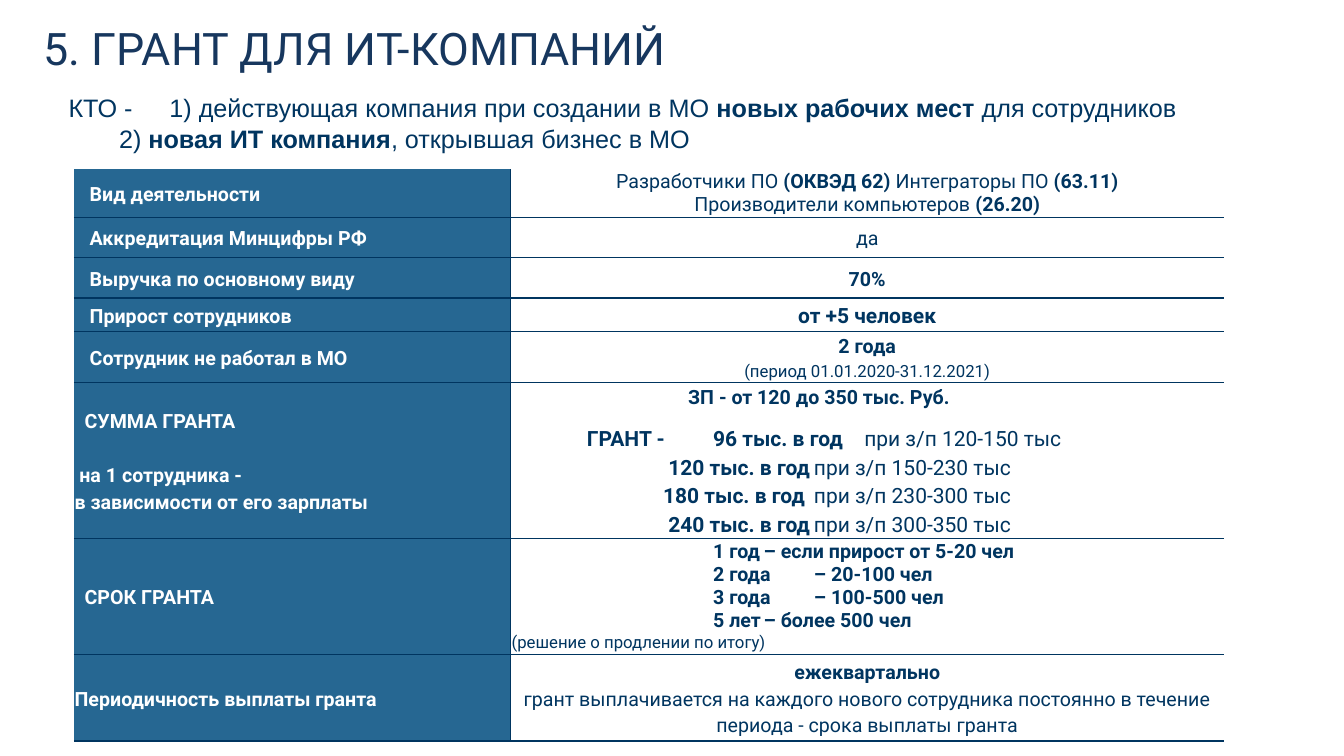
from collections import namedtuple
from lxml.etree import SubElement
from pptx import Presentation
from pptx.dml.color import RGBColor
from pptx.enum.text import MSO_ANCHOR as ANCHOR, MSO_AUTO_SIZE as AUTO, PP_ALIGN as ALIGN
from pptx.oxml.ns import qn
from pptx.util import Cm, Pt

NAVY = RGBColor(0x00, 0x35, 0x60)
TITLE_BLUE = RGBColor(0x17, 0x37, 0x5E)
STEEL = RGBColor(0x26, 0x67, 0x92)
WHITE = RGBColor(0xFF, 0xFF, 0xFF)
NO_STYLE = "{2D5ABB26-0587-4C30-8999-92F81FD0307C}"

Line = namedtuple("Line", "text size indent tabs spacing before",
                  defaults=(14, None, (), 1.15, 0))
Row = namedtuple("Row", "height label details")


def label(text, indent=0.38, before=0):
    return Line(f"*{text}*", indent=indent, before=before)


def grant(text, indent, *tabs, before=0):
    return Line(text, 15, indent, tabs, before=before)


def term(text):
    return Line(f"*{text}*", indent=5.08, tabs=(6.85,), spacing=1.0)


ROWS = [
    Row(1.22, [label("Вид деятельности")],
        [Line("Разработчики ПО *(ОКВЭД 62)* Интеграторы ПО *(63.11)*", spacing=1.0),
         Line("Производители компьютеров *(26.20)*", spacing=1.0)]),
    Row(1.01, [label("Аккредитация Минцифры РФ")], [Line("да")]),
    Row(1.02, [label("Выручка по основному виду")], [Line("*70%*")]),
    Row(0.84, [label("Прирост сотрудников")], [Line("*от +5 человек*", 15)]),
    Row(1.26, [label("Сотрудник не работал в МО")],
        [Line("*2 года*"), Line("(период 01.01.2020-31.12.2021)", 12)]),
    Row(3.93, [label("СУММА ГРАНТА", 0.25),
               label("на 1 сотрудника -", 0.12, 20),
               label("в зависимости от его зарплаты", 0)],
        [Line("*ЗП - от 120 до 350 тыс. Руб.*", indent=4.45),
         grant("*ГРАНТ -\t96 тыс. в год*\tпри з/п 120-150 тыс", 1.9, 4.48, 7.98, before=10),
         grant("*120 тыс. в год*\tпри з/п 150-230 тыс", 3.95, 7.8),
         grant("*180 тыс. в год*\tпри з/п 230-300 тыс", 3.82, 7.66),
         grant("*240 тыс. в год*\tпри з/п 300-350 тыс", 3.95, 7.66)]),
    Row(2.93, [label("СРОК ГРАНТА", 0.25)],
        [term("1 год\t– если прирост от 5-20 чел"),
         term("2 года\t– 20-100 чел"),
         term("3 года\t– 100-500 чел"),
         term("5 лет\t– более 500 чел"),
         Line("(решение о продлении по итогу)", 12, 0, spacing=1.0)]),
    Row(2.18, [label("Периодичность выплаты гранта", 0)],
        [Line("*ежеквартально*"),
         Line("грант выплачивается на каждого нового сотрудника постоянно "
              "в течение периода - срока выплаты гранта")]),
]


def add_runs(p, text, size, font, color):
    for i, part in enumerate(text.split("*")):
        if part:
            r = p.add_run()
            r.text = part
            r.font.size = Pt(size)
            r.font.name = font
            r.font.bold = i % 2 == 1
            r.font.color.rgb = color


def add_line(p, line, color):
    p.line_spacing = line.spacing
    p.space_before = Pt(line.before)
    p.alignment = ALIGN.CENTER if line.indent is None else ALIGN.LEFT
    pPr = p._p.get_or_add_pPr()
    pPr.set("marL", "0")
    pPr.set("indent", str(Cm(line.indent or 0)))
    if line.tabs:
        tabs = SubElement(pPr, qn("a:tabLst"))
        for pos in line.tabs:
            SubElement(tabs, qn("a:tab"), pos=str(Cm(pos)), algn="l")
    add_runs(p, line.text, line.size, "Roboto", color)


def add_border(cell, side):
    ln = SubElement(cell._tc.get_or_add_tcPr(), qn(f"a:{side}"), w=str(Pt(1)))
    fill = SubElement(ln, qn("a:solidFill"))
    SubElement(fill, qn("a:srgbClr"), val=str(NAVY))


def fill_cell(cell, lines, color, divider):
    cell.vertical_anchor = ANCHOR.MIDDLE
    cell.margin_left = cell.margin_right = Cm(0.02)
    cell.margin_top = cell.margin_bottom = Cm(0.02)
    tf = cell.text_frame
    for i, line in enumerate(lines):
        add_line(tf.add_paragraph() if i else tf.paragraphs[0], line, color)
    add_border(cell, divider)
    add_border(cell, "lnB")


def add_title(s, x, y, w, h):
    sp = s.shapes.title
    sp.left, sp.top, sp.width, sp.height = Cm(x), Cm(y), Cm(w), Cm(h)
    tf = sp.text_frame
    tf.auto_size = AUTO.NONE
    tf.vertical_anchor = ANCHOR.MIDDLE
    tf.margin_left = tf.margin_right = Cm(0.13)
    tf.margin_top = tf.margin_bottom = Cm(0.13)
    p = tf.paragraphs[0]
    p.alignment = ALIGN.LEFT
    p.line_spacing = 0.9
    add_runs(p, "5. ГРАНТ ДЛЯ ИТ-КОМПАНИЙ", 32, "Roboto", TITLE_BLUE)


def add_audience(s, x, y, w, h):
    tf = s.shapes.add_textbox(Cm(x), Cm(y), Cm(w), Cm(h)).text_frame
    tf.word_wrap = True
    add_runs(tf.paragraphs[0], "КТО -\t1) действующая компания при создании в МО "
             "*новых рабочих мест* для сотрудников", 18, "Arial", NAVY)
    add_runs(tf.add_paragraph(), "\t2) *новая ИТ компания*, открывшая бизнес в МО",
             18, "Arial", NAVY)


def add_conditions(s, x, y, w, h):
    table = s.shapes.add_table(len(ROWS), 2, Cm(x), Cm(y), Cm(w), Cm(h)).table
    table.first_row = table.horz_banding = False
    table._tbl.tblPr.find(qn("a:tableStyleId")).text = NO_STYLE
    table.columns[0].width = Cm(w * 0.38)
    table.columns[1].width = Cm(w * 0.62)
    for i, row in enumerate(ROWS):
        table.rows[i].height = Cm(row.height)
        name, details = table.cell(i, 0), table.cell(i, 1)
        fill_cell(name, row.label, WHITE, "lnR")
        name.fill.solid()
        name.fill.fore_color.rgb = STEEL
        fill_cell(details, row.details, NAVY, "lnL")
        details.fill.background()


def main():
    prs = Presentation()
    prs.slide_width, prs.slide_height = Cm(33.87), Cm(19.05)
    s = prs.slides.add_slide(prs.slide_layouts[5])
    add_conditions(s, 1.86, 4.26, 28.98, sum(row.height for row in ROWS))
    add_title(s, 0.97, 0, 32.28, 2.57)
    add_audience(s, 1.48, 2.21, 30.18, 1.8)
    prs.save("out.pptx")


if __name__ == "__main__":
    main()
